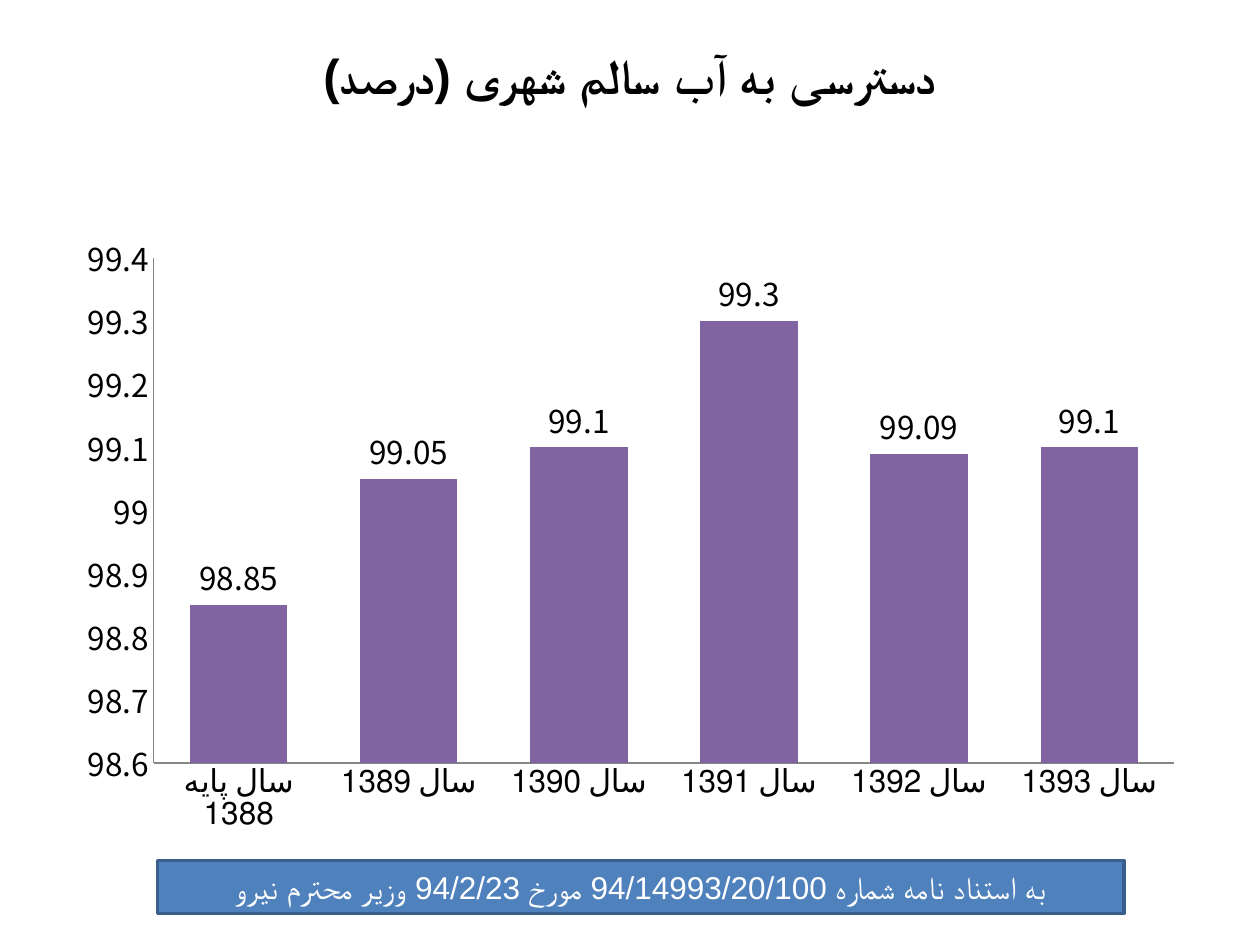
from dataclasses import dataclass

from lxml import etree
from pptx import Presentation
from pptx.chart.data import CategoryChartData
from pptx.dml.color import RGBColor
from pptx.enum.chart import XL_CHART_TYPE, XL_LABEL_POSITION, XL_TICK_MARK
from pptx.enum.shapes import MSO_SHAPE
from pptx.enum.text import MSO_ANCHOR, PP_ALIGN
from pptx.oxml import parse_xml
from pptx.oxml.ns import nsdecls, qn
from pptx.util import Inches, Pt

COLUMNS = XL_CHART_TYPE.COLUMN_CLUSTERED
OUTSIDE = XL_LABEL_POSITION.OUTSIDE_END
NO_TICK = XL_TICK_MARK.NONE
RECT = MSO_SHAPE.RECTANGLE
MIDDLE = MSO_ANCHOR.MIDDLE
CENTER = PP_ALIGN.CENTER

WIDTH, HEIGHT = Inches(10), Inches(7.5)
COLORS = {"text": "000000", "paper": "FFFFFF", "bar": "8064A2",
          "axis": "868686", "note": "4F81BD", "note_line": "3A5F8C"}
LATIN, ARABIC = "Noto Sans CJK KR", "Arial"

ACCESS = {"سال پایه 1388": 98.85, "سال 1389": 99.05, "سال 1390": 99.1,
          "سال 1391": 99.3, "سال 1392": 99.09, "سال 1393": 99.1}
PLOT_SHARES = {"x": 0.08, "y": 0.06, "w": 0.9, "h": 0.81}


@dataclass(frozen=True)
class Box:
    """A rectangle in inches."""
    left: float
    top: float
    width: float
    height: float

    def emu(self) -> tuple:
        return tuple(Inches(v) for v in (self.left, self.top, self.width, self.height))


TITLE_BOX = Box(0, 0.02, 10, 1.15)
CHART_BOX = Box(0.5, 1.75, 9, 4.95)
NOTE_BOX = Box(1.25, 6.83, 7.67, 0.42)


def rgb(name: str) -> RGBColor:
    return RGBColor.from_string(COLORS[name])


def format_font(font, color: str, **values) -> None:
    font.color.rgb = rgb(color)
    for key, value in values.items():
        setattr(font, key, value)


def write_rtl(sp, text: str, color: str, **values) -> None:
    """Write one centred right-to-left line in a shape."""
    tf = sp.text_frame
    tf.word_wrap = True
    tf.vertical_anchor = MIDDLE
    p = tf.paragraphs[0]
    p.alignment = CENTER
    p._p.get_or_add_pPr().set("rtl", "1")
    r = p.add_run()
    r.text = text
    format_font(r.font, color, **values)
    etree.SubElement(r._r.get_or_add_rPr(), qn("a:cs")).set("typeface", ARABIC)


def place_plot(chart, shares: dict) -> None:
    """Fix the inner plot area as shares of the chart."""
    plot_area = chart._chartSpace.find(".//" + qn("c:plotArea"))
    for old in plot_area.findall(qn("c:layout")):
        plot_area.remove(old)
    modes = "".join(f'<c:{k}Mode val="edge"/>' for k in "xy")
    sizes = "".join(f'<c:{k} val="{v}"/>' for k, v in shares.items())
    plot_area.insert(0, parse_xml(
        f'<c:layout {nsdecls("c")}><c:manualLayout><c:layoutTarget val="inner"/>'
        f"{modes}{sizes}</c:manualLayout></c:layout>"))


def add_access_chart(slide, box: Box) -> None:
    data = CategoryChartData()
    data.categories = list(ACCESS)
    data.add_series("Series 1", list(ACCESS.values()))
    chart = slide.shapes.add_chart(COLUMNS, *box.emu(), data).chart
    chart.has_legend = chart.has_title = False
    format_font(chart.font, "text", size=Pt(18), name=LATIN)
    place_plot(chart, PLOT_SHARES)

    plot = chart.plots[0]
    plot.gap_width = 75
    plot.vary_by_categories = False
    fill = plot.series[0].format.fill
    fill.solid()
    fill.fore_color.rgb = rgb("bar")
    plot.has_data_labels = True
    labels = plot.data_labels
    labels.show_value = True
    labels.position = OUTSIDE

    for axis in (chart.category_axis, chart.value_axis):
        axis.has_major_gridlines = False
        axis.major_tick_mark = axis.minor_tick_mark = NO_TICK
        axis.format.line.color.rgb = rgb("axis")
    format_font(chart.category_axis.tick_labels.font, "text", size=Pt(18), name=ARABIC)
    scale = {"minimum_scale": 98.6, "maximum_scale": 99.4, "major_unit": 0.1}
    for key, value in scale.items():
        setattr(chart.value_axis, key, value)


def add_note(slide, box: Box, text: str) -> None:
    sp = slide.shapes.add_shape(RECT, *box.emu())
    sp.shadow.inherit = False
    sp.fill.solid()
    sp.fill.fore_color.rgb = rgb("note")
    sp.line.color.rgb = rgb("note_line")
    sp.line.width = Pt(2)
    write_rtl(sp, text, "paper", size=Pt(18), name=LATIN)


def main() -> None:
    prs = Presentation()
    prs.slide_width, prs.slide_height = WIDTH, HEIGHT
    slide = prs.slides.add_slide(prs.slide_layouts[5])
    title = slide.shapes.title
    title.left, title.top, title.width, title.height = TITLE_BOX.emu()
    title.fill.solid()
    title.fill.fore_color.rgb = rgb("paper")
    write_rtl(title, "دسترسی به آب سالم شهری (درصد)", "text",
              size=Pt(28), name=ARABIC, bold=True)
    add_access_chart(slide, CHART_BOX)
    add_note(slide, NOTE_BOX,
             "به استناد نامه شماره 94/14993/20/100 مورخ 94/2/23 وزیر محترم نیرو")
    prs.save("out.pptx")


if __name__ == "__main__":
    main()
